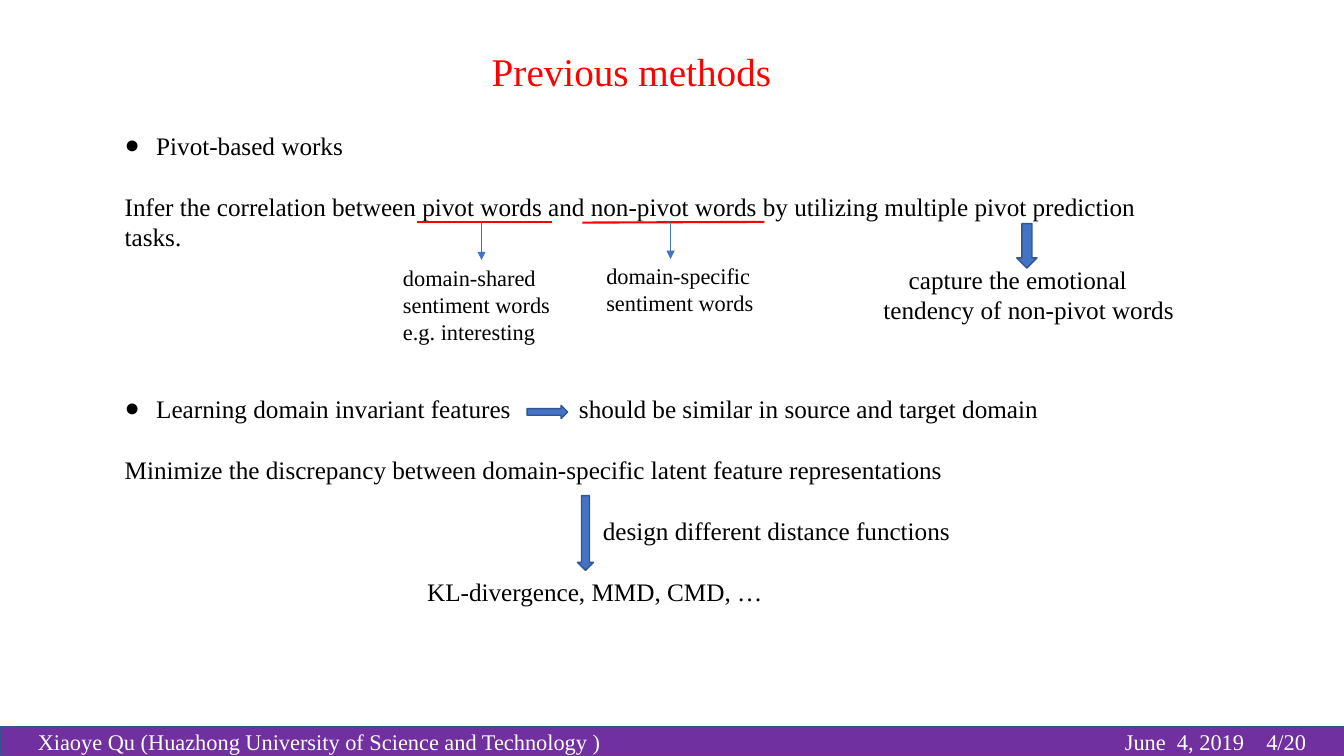
"""Build the slide on previous methods for sentiment transfer."""
from lxml import etree
from pptx import Presentation
from pptx.dml.color import RGBColor
from pptx.enum.shapes import MSO_CONNECTOR as Connector, MSO_SHAPE as Shape
from pptx.enum.text import MSO_ANCHOR as Anchor, MSO_AUTO_SIZE as AutoSize, PP_ALIGN as Align
from pptx.oxml.ns import qn
from pptx.util import Pt

FONT = "Times New Roman"
COLORS = {"title": "FF0000", "text": "000000", "footer": "7030A0", "white": "FFFFFF",
          "underline": "FF0000", "arrow": "4472C4", "outline": "325491"}


def color(name):
    """Return a colour of the slide by name."""
    return RGBColor.from_string(COLORS[name])


def write(para, text, size, name="text"):
    """Add one run of text to a paragraph."""
    span = para.add_run()
    span.text = text
    span.font.name = FONT
    span.font.size = Pt(size)
    span.font.color.rgb = color(name)


deck = Presentation()
deck.slide_width, deck.slide_height = Pt(960), Pt(540)
page = deck.slides.add_slide(deck.slide_layouts[5])

title = page.shapes.title
title.left, title.top, title.width, title.height = Pt(344), Pt(30.2), Pt(328), Pt(41)
title.text_frame.auto_size = AutoSize.NONE
title.text_frame.vertical_anchor = Anchor.TOP
title.text_frame.paragraphs[0].alignment = Align.LEFT
write(title.text_frame.paragraphs[0], "Previous methods", 28, "title")

footer = page.shapes.add_shape(Shape.RECTANGLE, Pt(0), Pt(519), Pt(960), Pt(21))
footer.shadow.inherit = False
footer.fill.solid()
footer.fill.fore_color.rgb = color("footer")
footer.line.color.rgb = color("outline")
footer.line.width = Pt(1)
footer.text_frame.margin_left = Pt(27)
footer.text_frame.vertical_anchor = Anchor.MIDDLE
para = footer.text_frame.paragraphs[0]
para.alignment = Align.LEFT
tabs = etree.SubElement(para._p.get_or_add_pPr(), qn("a:tabLst"))
for stop in (776.5, 877.5):
    etree.SubElement(tabs, qn("a:tab"), pos=str(Pt(stop)), algn="l")
write(para, "Xiaoye Qu (Huazhong University of Science and Technology )\tJune  4, 2019\t4/20",
      16, "white")

# left, top, width, height, size, paragraphs of (text, bullet, indent, space before)
text_blocks = [
    (82, 89.3, 778, 94, 18, [
        ("Pivot-based works", True, 22.5, 0),
        ("Infer the correlation between pivot words and non-pivot words by utilizing "
         "multiple pivot prediction tasks.", False, 0, 22)]),
    (280.8, 185, 169, 66, 16, [
        ("domain-shared sentiment words", False, 0, 0),
        ("e.g. interesting", False, 0, 0)]),
    (426, 183.6, 140, 46, 16, [
        ("domain-specific", False, 0, 0),
        ("sentiment words", False, 0, 0)]),
    (624, 185, 286, 51, 18, [
        ("capture the emotional", False, 18, 0),
        ("tendency of non-pivot words", False, 0, 0)]),
    (82, 277.4, 760, 181, 18, [
        ("Learning domain invariant features", True, 22.5, 0),
        ("Minimize the discrepancy between domain-specific latent feature representations",
         False, 0, 22),
        ("design different distance functions", False, 341.5, 22),
        ("KL-divergence, MMD, CMD, …", False, 216, 22)]),
    (406.5, 277.4, 400, 29, 18, [
        ("should be similar in source and target domain", False, 0, 0)]),
]
for left, top, width, height, size, lines in text_blocks:
    box = page.shapes.add_textbox(Pt(left), Pt(top), Pt(width), Pt(height))
    box.text_frame.word_wrap = True
    for number, (text, bullet, indent, before) in enumerate(lines):
        para = box.text_frame.add_paragraph() if number else box.text_frame.paragraphs[0]
        para.space_before = Pt(before)
        props = para._p.get_or_add_pPr()
        props.set("marL", str(Pt(indent)))
        if bullet:
            props.set("indent", str(-Pt(indent)))
            etree.SubElement(props, qn("a:buFont"), typeface=FONT)
            etree.SubElement(props, qn("a:buChar"), char="●")
        write(para, text, size)

lines = [
    (298, 158.5, 394, 158.5, "underline", 1.5, False),
    (416, 159, 546, 158.5, "underline", 1.5, False),
    (344, 158.5, 344, 185.8, "arrow", 0.5, True),
    (479, 158.5, 479, 185, "arrow", 0.5, True),
]
for x1, y1, x2, y2, name, weight, pointed in lines:
    line = page.shapes.add_connector(Connector.STRAIGHT, Pt(x1), Pt(y1), Pt(x2), Pt(y2))
    line.line.color.rgb = color(name)
    line.line.width = Pt(weight)
    if pointed:
        etree.SubElement(line.line._get_or_add_ln(), qn("a:tailEnd"), type="triangle")
    etree.SubElement(line._element.spPr, qn("a:effectLst"))

block_arrows = [
    (Shape.RIGHT_ARROW, 376.5, 289.5, 29, 9.5),
    (Shape.DOWN_ARROW, 412.5, 354, 11.5, 53.5),
    (Shape.DOWN_ARROW, 726.3, 159.8, 14.5, 31.7),
]
for kind, left, top, width, height in block_arrows:
    arrow = page.shapes.add_shape(kind, Pt(left), Pt(top), Pt(width), Pt(height))
    arrow.shadow.inherit = False
    arrow.fill.solid()
    arrow.fill.fore_color.rgb = color("arrow")
    arrow.line.color.rgb = color("outline")
    arrow.line.width = Pt(1)

deck.save("out.pptx")
